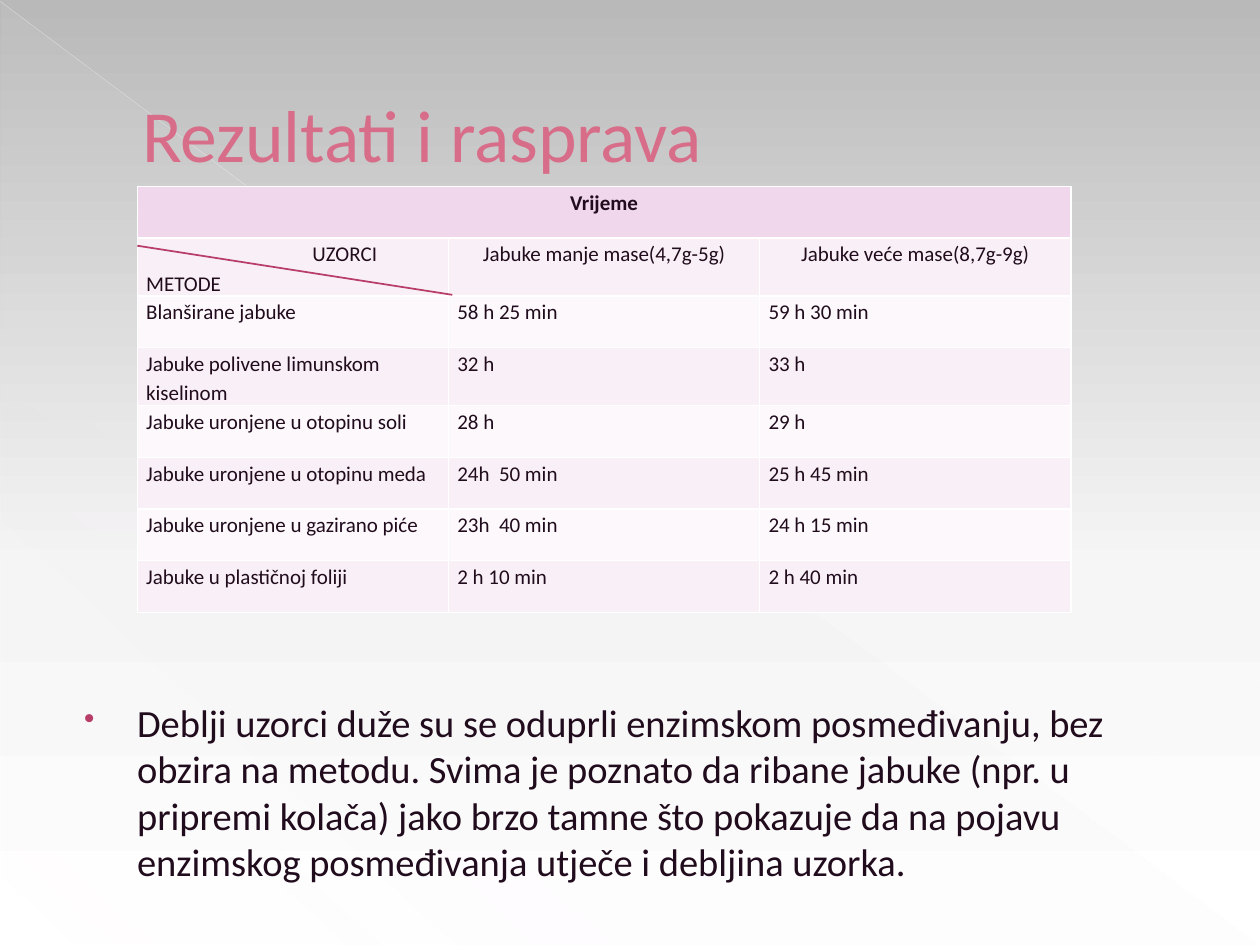
from lxml.etree import SubElement
from pptx import Presentation
from pptx.dml.color import RGBColor
from pptx.enum.shapes import MSO_CONNECTOR as Connector, MSO_SHAPE as Shape
from pptx.enum.text import MSO_ANCHOR as Anchor, PP_ALIGN as Align
from pptx.oxml.ns import qn
from pptx.util import Inches, Pt

FONT = "Calibri"
INK = "210C1D"
ACCENT = "B83D68"
WHITE = "FFFFFF"
HEADER_FILL = "F0D7EB"
BAND_FILLS = ["F9F0F7", "FCF8FB"]
ROW_HEIGHT = 0.41
COLUMN_WIDTH = 2.47

SAMPLES = ["Jabuke manje mase(4,7g-5g)", "Jabuke veće mase(8,7g-9g)"]
METHODS = [
    ("Blanširane jabuke", "58 h 25 min", "59 h 30 min"),
    ("Jabuke polivene limunskom kiselinom", "32 h", "33 h"),
    ("Jabuke uronjene u otopinu soli", "28 h", "29 h"),
    ("Jabuke uronjene u otopinu meda", "24h  50 min", "25 h 45 min"),
    ("Jabuke uronjene u gazirano piće", "23h  40 min", "24 h 15 min"),
    ("Jabuke u plastičnoj foliji", "2 h 10 min", "2 h 40 min"),
]
CONCLUSION = (
    "Deblji uzorci duže su se oduprli enzimskom posmeđivanju, bez obzira na "
    "metodu. Svima je poznato da ribane jabuke (npr. u pripremi kolača) jako "
    "brzo tamne što pokazuje da na pojavu enzimskog posmeđivanja utječe i "
    "debljina uzorka."
)


def color(value):
    return RGBColor.from_string(value)


def add_color(parent, value, opacity=100):
    rgb = SubElement(parent, qn("a:srgbClr"), val=value)
    if opacity < 100:
        SubElement(rgb, qn("a:alpha"), val=str(opacity * 1000))


def set_gradient(fill, owner, stops, angle):
    fill.gradient()
    fill.gradient_angle = 360 - angle
    stop_list = owner.find(".//" + qn("a:gsLst"))
    for default_stop in list(stop_list):
        stop_list.remove(default_stop)
    for position, value, opacity in stops:
        stop = SubElement(stop_list, qn("a:gs"), pos=str(position * 1000))
        add_color(stop, value, opacity)


def add_line(slide, start, end, value, width, opacity=100):
    line = slide.shapes.add_connector(
        Connector.STRAIGHT, *[Inches(n) for n in (*start, *end)])
    line.line.width = Pt(width)
    line.line.fill.solid()
    line.line.color.rgb = color(value)
    if opacity < 100:
        rgb = line.element.spPr.find(".//" + qn("a:srgbClr"))
        SubElement(rgb, qn("a:alpha"), val=str(opacity * 1000))
    SubElement(line.element.spPr, qn("a:effectLst"))


def set_font(paragraph, size, value, bold=False):
    font = paragraph.font
    font.name = FONT
    font.size = Pt(size)
    font.bold = bold
    font.color.rgb = color(value)


def set_indent(paragraph, margin, first_line=0):
    properties = paragraph._p.get_or_add_pPr()
    properties.set("marL", str(Inches(margin)))
    properties.set("indent", str(Inches(first_line)))
    return properties


def add_text(slide, box, text, anchor):
    frame = slide.shapes.add_textbox(*[Inches(n) for n in box]).text_frame
    frame.word_wrap = True
    frame.vertical_anchor = anchor
    frame.text = text
    return frame.paragraphs[0]


def add_bullet(properties):
    add_color(SubElement(properties, qn("a:buClr")), ACCENT)
    SubElement(properties, qn("a:buSzPct"), val="80000")
    SubElement(properties, qn("a:buChar"), char="•")


def set_borders(cell):
    properties = cell._tc.get_or_add_tcPr()
    for position, side in enumerate(("lnL", "lnR", "lnT", "lnB")):
        border = properties.makeelement(qn("a:" + side), {"w": str(Pt(1))})
        add_color(SubElement(border, qn("a:solidFill")), WHITE)
        properties.insert(position, border)


def fill_cell(cell, text, fill, align=Align.LEFT, bold=False):
    cell.margin_left = cell.margin_right = Inches(0.07)
    cell.margin_top = cell.margin_bottom = 0
    cell.fill.solid()
    cell.fill.fore_color.rgb = color(fill)
    set_borders(cell)
    cell.text = text
    for paragraph in cell.text_frame.paragraphs:
        paragraph.alignment = align
        paragraph.line_spacing = 1.15
        set_font(paragraph, 12, INK, bold)


def add_times_table(slide):
    rows = [("Vrijeme", "", ""), ("UZORCI\nMETODE", *SAMPLES), *METHODS]
    table = slide.shapes.add_table(
        len(rows), 3, Inches(1.09), Inches(1.48),
        Inches(3 * COLUMN_WIDTH), Inches(len(rows) * ROW_HEIGHT)).table
    for column in table.columns:
        column.width = Inches(COLUMN_WIDTH)
    for r, row in enumerate(rows):
        table.rows[r].height = Inches(ROW_HEIGHT)
        fill = BAND_FILLS[(r - 1) % 2] if r else HEADER_FILL
        for c, text in enumerate(row):
            centred = r == 0 or (r == 1 and c > 0)
            fill_cell(table.cell(r, c), text, fill,
                      Align.CENTER if centred else Align.LEFT, r == 0)
    table.cell(0, 0).merge(table.cell(0, 2))
    set_indent(table.cell(1, 0).text_frame.paragraphs[0], 1.32)


def add_backdrop(slide):
    set_gradient(slide.background.fill, slide.element,
                 [(0, "B9B9B9", 100), (60, "F6F6F6", 100), (100, WHITE, 100)], 90)
    triangle = slide.shapes.add_shape(
        Shape.RIGHT_TRIANGLE, Inches(0.01), Inches(0.02), Inches(9.98), Inches(7.48))
    triangle.shadow.inherit = False
    triangle.line.fill.background()
    set_gradient(triangle.fill, triangle.element,
                 [(0, "F4E7ED", 10), (70, "F4E7ED", 8), (100, "F4E7ED", 1)], 133)
    add_line(slide, (0, 0.01), (9.99, 7.49), WHITE, 0.39, 35)
    add_line(slide, (10, 5.41), (7.07, 7.49), WHITE, 0.47, 45)


def main():
    deck = Presentation()
    deck.slide_width, deck.slide_height = Inches(10), Inches(7.5)
    slide = deck.slides.add_slide(deck.slide_layouts[6])
    add_backdrop(slide)

    title = add_text(slide, (0.5, 0.29, 9, 1.53), "Rezultati i rasprava", Anchor.MIDDLE)
    set_indent(title, 0.53)
    set_font(title, 42, "D86D89")

    conclusion = add_text(slide, (0.5, 5.5, 9, 1.56), CONCLUSION, Anchor.TOP)
    add_bullet(set_indent(conclusion, 0.49, -0.42))
    set_font(conclusion, 22, INK)

    add_times_table(slide)
    add_line(slide, (1.09, 1.95), (3.59, 2.34), ACCENT, 1)
    deck.save("out.pptx")


if __name__ == "__main__":
    main()
